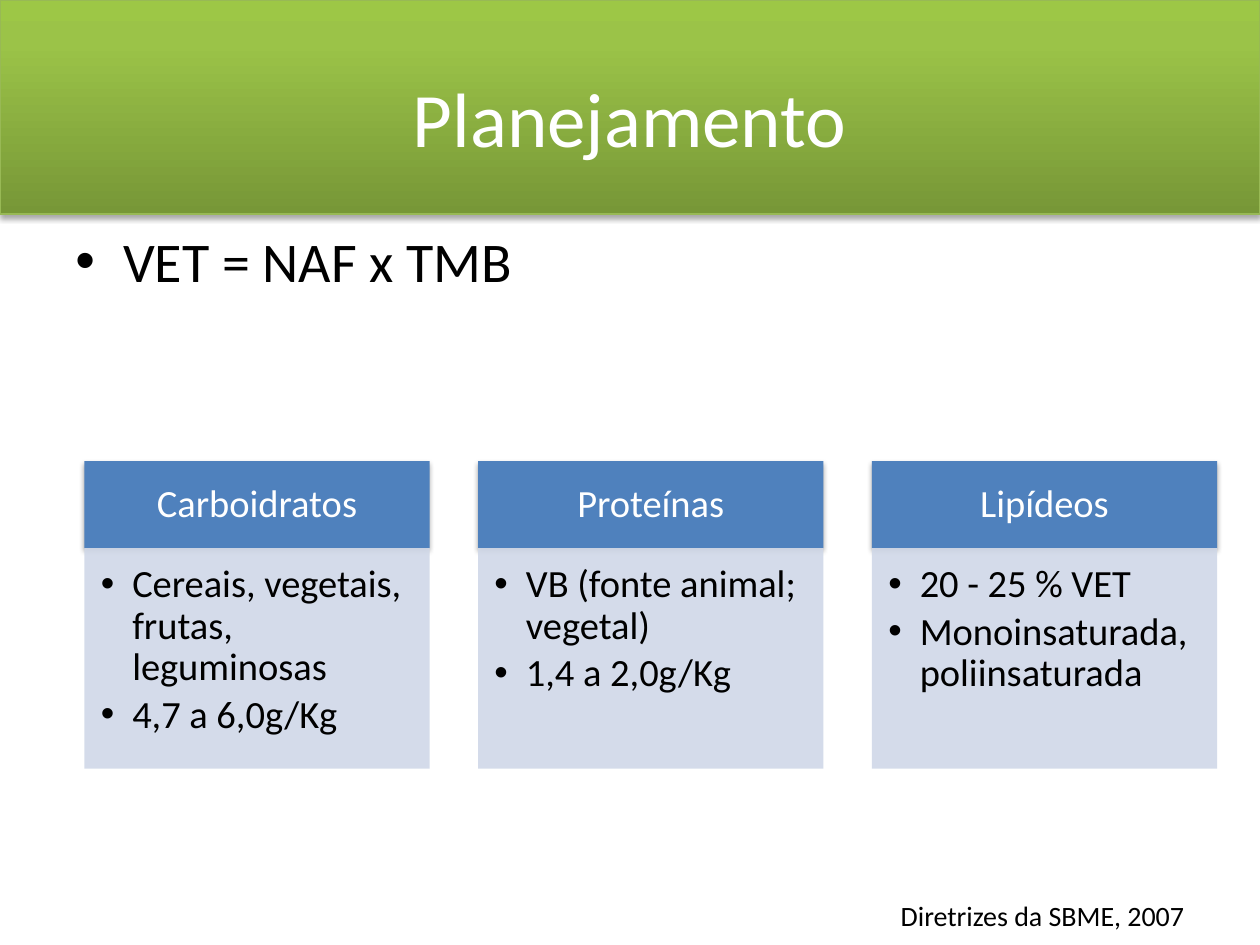
from lxml.etree import SubElement as Sub
from pptx import Presentation
from pptx.dml.color import RGBColor as RGB
from pptx.enum.shapes import MSO_SHAPE as Shape
from pptx.enum.text import MSO_ANCHOR as Anchor, MSO_AUTO_SIZE as Auto, PP_ALIGN as Align
from pptx.oxml.ns import qn
from pptx.util import Emu, Inches, Pt

FONT = "Calibri"
WHITE, BLACK = "FFFFFF", "000000"
HEAD, BODY = "4F81BD", "D0D8E8"

# Card grid, in inches
LEFT, STEP, WIDE = 0.67, 3.125, 2.74
TOP, HEAD_H, BODY_H = 3.66, 0.69, 1.75

CARDS = [
    ("Carboidratos", ["Cereais, vegetais, frutas, leguminosas", "4,7 a 6,0g/Kg"]),
    ("Proteínas", ["VB (fonte animal; vegetal)", "1,4 a 2,0g/Kg"]),
    ("Lipídeos", ["20 - 25 % VET", "Monoinsaturada, poliinsaturada"]),
]


def color(code):
    return RGB.from_string(code)


def add_run(para, text, size, code):
    run = para.add_run()
    run.text = text
    run.font.name = FONT
    run.font.size = Pt(size)
    run.font.color.rgb = color(code)


def add_bullet(para, indent):
    """Give the paragraph a round bullet with a hanging indent."""
    props = para._p.get_or_add_pPr()
    props.set("marL", str(Inches(indent)))
    props.set("indent", str(-Inches(indent)))
    Sub(props, qn("a:buFont"), typeface="Arial")
    Sub(props, qn("a:buChar"), char="•")


def add_shadow(shape):
    """Soft shadow straight below the shape."""
    effects = shape.element.spPr.find(qn("a:effectLst"))
    outer = Sub(effects, qn("a:outerShdw"), blurRad=str(Pt(3.1)),
                dist=str(Pt(1.8)), dir="5400000", rotWithShape="0")
    tone = Sub(outer, qn("a:srgbClr"), val=BLACK)
    Sub(tone, qn("a:alpha"), val="35000")


def add_box(slide, spot, code, insets=(0.1, 0.05, 0.1, 0.05)):
    box = slide.shapes.add_shape(Shape.RECTANGLE, *map(Inches, spot))
    box.shadow.inherit = False
    box.fill.solid()
    box.fill.fore_color.rgb = color(code)
    box.line.fill.background()
    frame = box.text_frame
    frame.word_wrap = True
    (frame.margin_left, frame.margin_top,
     frame.margin_right, frame.margin_bottom) = map(Inches, insets)
    return box


def add_band(slide, width):
    """Green gradient band, placed behind the title."""
    band = add_box(slide, (0, 0, width, 1.7), WHITE)
    band.fill.gradient()
    band.fill.gradient_angle = 90
    stops = band.element.spPr.find(qn("a:gradFill")).find(qn("a:gsLst"))
    for stop in list(stops):
        stops.remove(stop)
    for share, code in ((0, "779737"), (80, "9BC348"), (100, "9DC746")):
        stop = Sub(stops, qn("a:gs"), pos=str(share * 1000))
        Sub(stop, qn("a:srgbClr"), val=code)
    band.line.color.rgb = color("98B955")
    band.line.width = Pt(0.75)
    add_shadow(band)
    slide.shapes.title.element.addprevious(band.element)


def set_title(slide, text):
    title = slide.shapes.title
    title.left, title.top, title.width, title.height = map(Inches, (0.5, 0.3, 9, 1.25))
    title.text_frame.vertical_anchor = Anchor.MIDDLE
    para = title.text_frame.paragraphs[0]
    para.alignment = Align.CENTER
    add_run(para, text, 44, WHITE)


def add_text(slide, spot, text, size, wrap=True):
    box = slide.shapes.add_textbox(*map(Inches, spot))
    box.text_frame.word_wrap = wrap
    para = box.text_frame.paragraphs[0]
    add_run(para, text, size, BLACK)
    return box.text_frame, para


def add_card(slide, col, name, items):
    left = LEFT + col * STEP

    # Heading
    head = add_box(slide, (left, TOP, WIDE, HEAD_H), HEAD, (0.17, 0.1, 0.17, 0.1))
    add_shadow(head)
    head.text_frame.vertical_anchor = Anchor.MIDDLE
    para = head.text_frame.paragraphs[0]
    para.alignment = Align.CENTER
    para.line_spacing = 0.9
    add_run(para, name, 22, WHITE)

    # Bullet list on a slightly clear panel
    panel = add_box(slide, (left, TOP + HEAD_H, WIDE, BODY_H), BODY,
                    (0.13, 0.13, 0.17, 0.19))
    tone = panel.element.spPr.find(qn("a:solidFill"))[0]
    Sub(tone, qn("a:alpha"), val="90000")
    frame = panel.text_frame
    frame.vertical_anchor = Anchor.TOP
    for row, item in enumerate(items):
        para = frame.add_paragraph() if row else frame.paragraphs[0]
        para.alignment = Align.LEFT
        para.line_spacing = 0.9
        para.space_after = Pt(3.3)
        add_bullet(para, 0.25)
        add_run(para, item, 22, BLACK)


def main():
    deck = Presentation()
    deck.slide_width, deck.slide_height = Inches(10), Inches(7.5)
    slide = deck.slides.add_slide(deck.slide_layouts[5])

    # Title band
    add_band(slide, Emu(deck.slide_width).inches)
    set_title(slide, "Planejamento")

    # Formula
    _, para = add_text(slide, (0.5, 1.75, 9, 4.95), "VET = NAF x TMB", 32)
    para.space_before = Pt(6.4)
    add_bullet(para, 0.38)

    # Nutrient cards
    for col, (name, items) in enumerate(CARDS):
        add_card(slide, col, name, items)

    # Reference
    frame, _ = add_text(slide, (7.05, 7.08, 2.48, 0.37),
                        "Diretrizes da SBME, 2007", 16, wrap=False)
    frame.auto_size = Auto.SHAPE_TO_FIT_TEXT

    deck.save("out.pptx")


if __name__ == "__main__":
    main()
